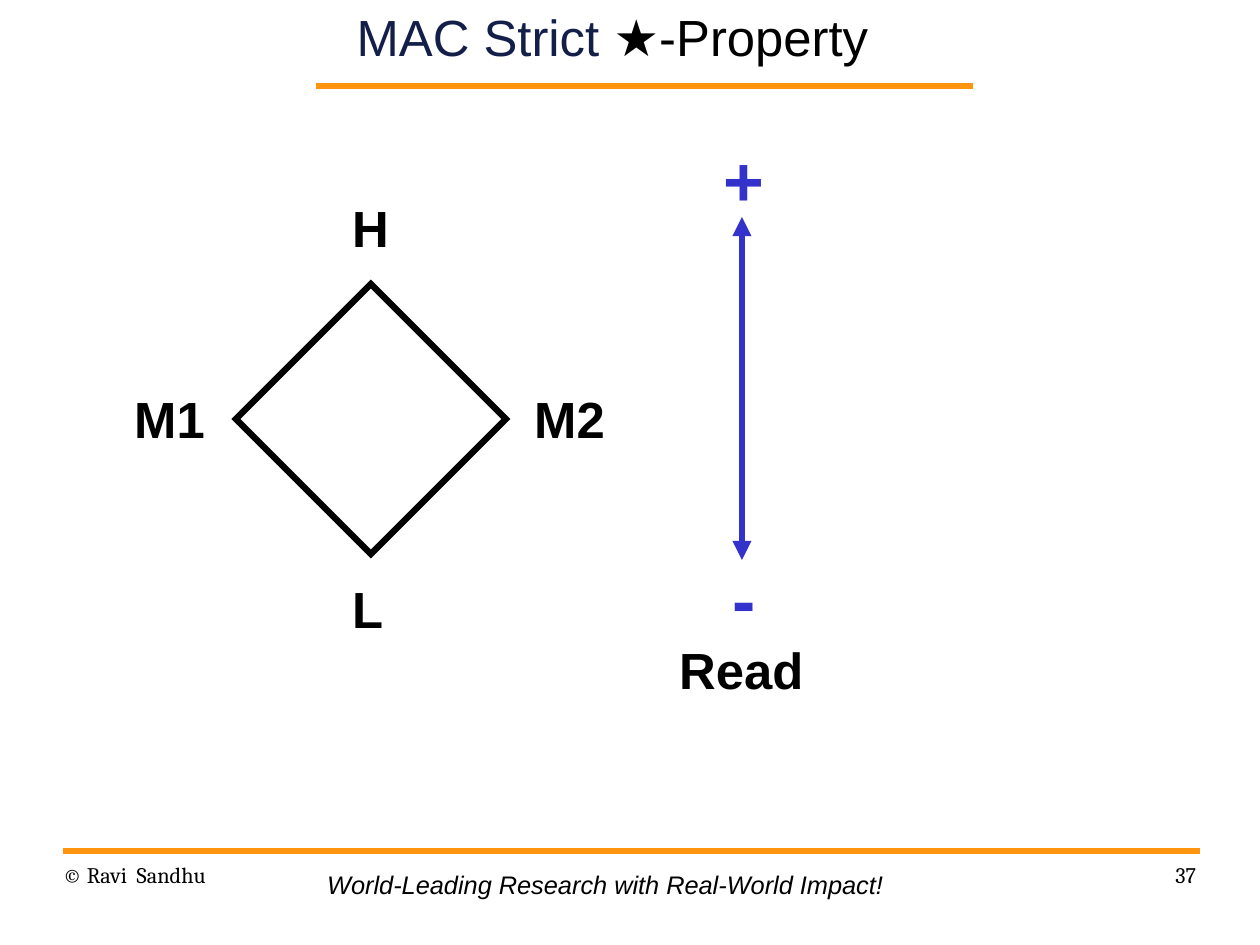
import dataclasses

import lxml.etree
import pptx
import pptx.dml.color
import pptx.enum.shapes
import pptx.enum.text
import pptx.oxml.ns
import pptx.util

EMU_PER_PX = 8000  # a 28 by 21 cm slide is 1260 by 945 px
ALIGN = pptx.enum.text.PP_ALIGN


@dataclasses.dataclass(frozen=True)
class Theme:
    ink: str = "000000"
    navy: str = "131F49"
    blue: str = "3333CC"
    orange: str = "FF950E"
    sans: str = "Arial"
    serif: str = "Cambria"
    sign_size: int = 44
    label_size: int = 32
    motto_size: int = 16
    footer_size: int = 14
    rule_width: float = 4.31
    line_width: float = 4


def px(*lengths):
    return [pptx.util.Emu(length * EMU_PER_PX) for length in lengths]


def rgb(color):
    return pptx.dml.color.RGBColor.from_string(color)


def add_xml(parent, tag, **attributes):
    lxml.etree.SubElement(parent, pptx.oxml.ns.qn(tag), attributes)


class SlideBuilder:
    def __init__(self, deck, theme):
        self.theme = theme
        self.slide = deck.slides.add_slide(deck.slide_layouts[5])

    def format_run(self, run, color=None, **formats):
        defaults = {"name": self.theme.sans, "size": self.theme.label_size}
        for key, value in {**defaults, **formats}.items():
            setattr(run.font, key, pptx.util.Pt(value) if key == "size" else value)
        run.font.color.rgb = rgb(color or self.theme.ink)

    def format_frame(self, frame, **formats):
        for key, value in formats.items():
            setattr(frame, key, value)

    def title(self, box, colored_parts, right_inset):
        title = self.slide.shapes.title
        title.left, title.top, title.width, title.height = px(*box)
        self.format_frame(
            title.text_frame, margin_left=0, margin_top=0, margin_bottom=0,
            margin_right=px(right_inset)[0], word_wrap=True,
            auto_size=pptx.enum.text.MSO_AUTO_SIZE.NONE,
            vertical_anchor=pptx.enum.text.MSO_ANCHOR.MIDDLE)
        paragraph = title.text_frame.paragraphs[0]
        paragraph.alignment = ALIGN.CENTER
        for text, color in colored_parts:
            run = paragraph.add_run()
            run.text = text
            self.format_run(run, color, bold=False)

    def label(self, box, text, shapes=None, **formats):
        """Add a single-line text box that fits its text."""
        frame = (shapes or self.slide.shapes).add_textbox(*px(*box)).text_frame
        self.format_frame(
            frame, word_wrap=False,
            auto_size=pptx.enum.text.MSO_AUTO_SIZE.SHAPE_TO_FIT_TEXT)
        run = frame.paragraphs[0].add_run()
        run.text = text
        self.format_run(run, **formats)

    def footer(self, box, text, alignment):
        frame = self.slide.shapes.add_textbox(*px(*box)).text_frame
        self.format_frame(frame, word_wrap=True, margin_left=0, margin_top=0,
                          margin_right=0, margin_bottom=0)
        paragraph = frame.paragraphs[0]
        paragraph.alignment = alignment
        paragraph.line_spacing = 1.01
        run = paragraph.add_run()
        run.text = text
        self.format_run(run, name=self.theme.serif, size=self.theme.footer_size)

    def line(self, start, end, color, width, arrows=False):
        connector = self.slide.shapes.add_connector(
            pptx.enum.shapes.MSO_CONNECTOR.STRAIGHT, *px(*start, *end))
        connector.line.color.rgb = rgb(color)
        connector.line.width = pptx.util.Pt(width)
        if arrows:
            for tag in ("a:headEnd", "a:tailEnd"):
                add_xml(connector.line._get_or_add_ln(), tag, type="triangle")
        add_xml(connector._element.spPr, "a:effectLst")

    def diamond(self, box, shapes):
        diamond = shapes.add_shape(
            pptx.enum.shapes.MSO_SHAPE.DIAMOND, *px(*box))
        diamond.shadow.inherit = False
        diamond.fill.background()
        diamond.line.color.rgb = rgb(self.theme.ink)
        diamond.line.width = pptx.util.Pt(self.theme.line_width)
        add_xml(diamond.line._get_or_add_ln(), "a:miter", lim="800000")


def main():
    deck = pptx.Presentation()
    deck.slide_width, deck.slide_height = px(1260, 945)
    theme = Theme()
    builder = SlideBuilder(deck, theme)

    builder.title((350, 0, 567, 72),
                  [("MAC Strict ", theme.navy), ("★-Property", theme.ink)],
                  right_inset=42)
    for left, right, y in ((316, 973, 86), (63, 1200, 851)):
        builder.line((left, y), (right, y), theme.orange, theme.rule_width)

    builder.footer((63, 861, 294, 65), "© Ravi  Sandhu", ALIGN.LEFT)
    builder.footer((902, 861, 294, 65), "37", ALIGN.RIGHT)
    builder.label((316, 863, 592, 42),
                  "World-Leading Research with Real-World Impact!",
                  size=theme.motto_size, italic=True)

    lattice = builder.slide.shapes.add_group_shape().shapes
    builder.diamond((236, 284, 270, 270), lattice)
    for level, left, top, width in (("H", 341, 191, 61), ("L", 341, 572, 55),
                                    ("M1", 123, 382, 95), ("M2", 523, 382, 95)):
        builder.label((left, top, width, 73), level, lattice, bold=True)

    builder.line((742, 560), (742, 217), theme.blue, theme.line_width, arrows=True)
    builder.label((668, 633, 149, 73), "Read", bold=True)
    for sign, left, top, width in (("-", 721, 550, 47), ("+", 712, 131, 65)):
        builder.label((left, top, width, 96), sign, bold=True,
                      size=theme.sign_size, color=theme.blue)

    deck.save("out.pptx")


if __name__ == "__main__":
    main()
